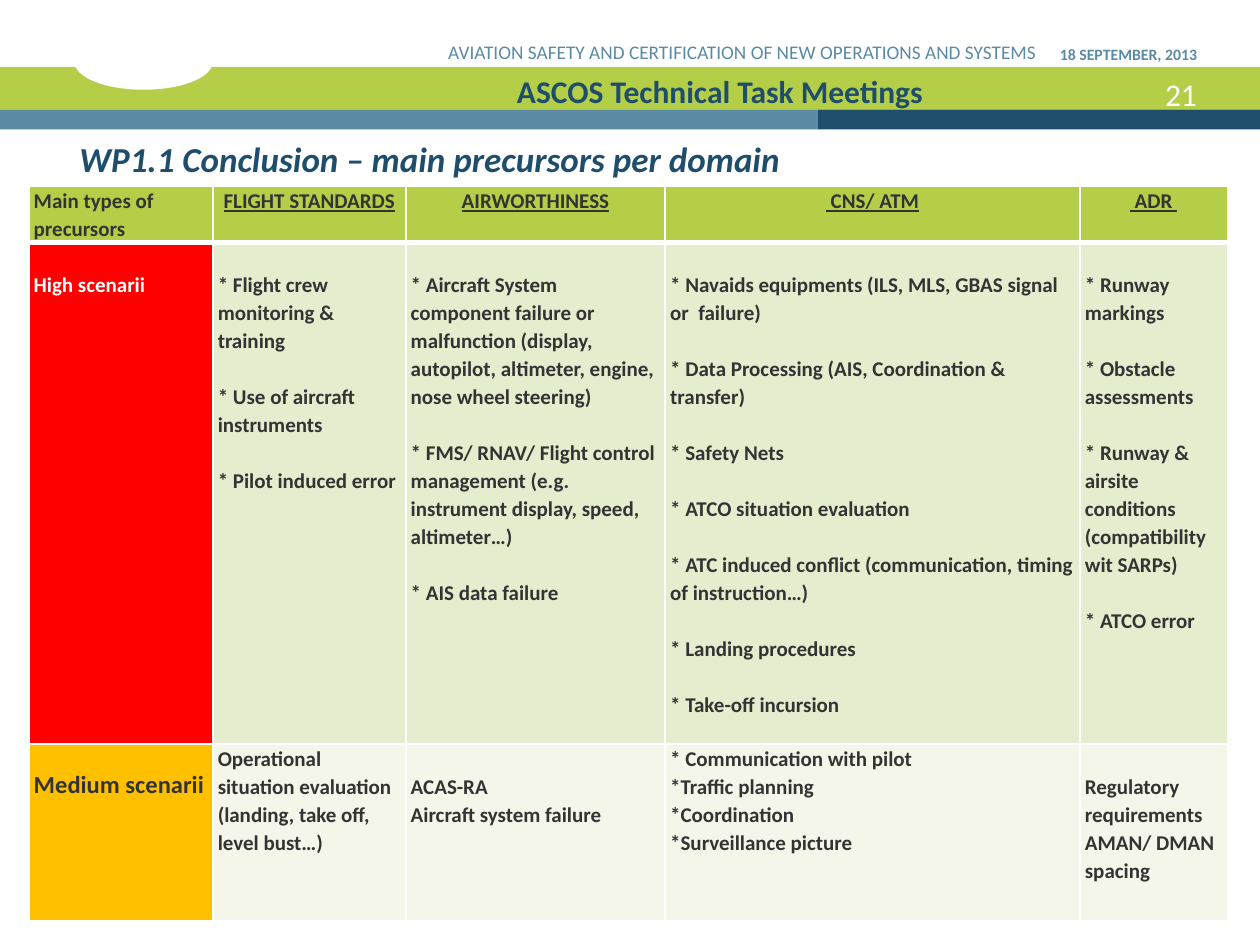
from dataclasses import dataclass

from lxml import etree
from pptx import Presentation
from pptx.dml.color import RGBColor
from pptx.enum.shapes import MSO_SHAPE
from pptx.enum.text import MSO_ANCHOR, MSO_AUTO_SIZE, PP_ALIGN
from pptx.oxml.ns import qn
from pptx.util import Cm, Pt

RECTANGLE, OVAL = MSO_SHAPE.RECTANGLE, MSO_SHAPE.OVAL
LEFT, CENTER, RIGHT = PP_ALIGN.LEFT, PP_ALIGN.CENTER, PP_ALIGN.RIGHT
TOP, BOTTOM = MSO_ANCHOR.TOP, MSO_ANCHOR.BOTTOM
GROW = MSO_AUTO_SIZE.SHAPE_TO_FIT_TEXT


@dataclass(frozen=True)
class Theme:
    font: str = "Calibri"
    white: str = "FFFFFF"
    green: str = "B5CE48"
    navy: str = "1E4E6B"
    steel: str = "5B8AA5"
    text: str = "333333"
    red: str = "FF0000"
    amber: str = "FFC000"
    band_dark: str = "E5EDCF"
    band_light: str = "F3F6E9"
    date_size: int = 9
    project_size: int = 11
    table_size: int = 12
    medium_size: int = 14
    meeting_size: int = 18
    title_size: int = 20
    line_pitch: int = 16


THEME = Theme()

COLUMN_WIDTHS = (3.71, 3.89, 5.23, 8.36, 2.97)
ROW_HEIGHTS = (1.12, 10.11, 3.56)

HEADER = ("Main types of precursors", "FLIGHT STANDARDS", "AIRWORTHINESS", " CNS/ ATM", " ADR ")
HIGH = (
    ("High scenarii",),
    ("* Flight crew monitoring & training",
     "* Use of aircraft  instruments",
     "* Pilot induced error"),
    ("* Aircraft System component failure or malfunction "
     "(display, autopilot, altimeter, engine, nose wheel steering)",
     "* FMS/ RNAV/ Flight control management (e.g. instrument display, speed, altimeter…)",
     "* AIS data failure"),
    ("* Navaids equipments (ILS, MLS, GBAS signal or  failure)",
     "* Data Processing (AIS, Coordination & transfer)",
     "* Safety Nets",
     "* ATCO situation evaluation",
     "* ATC induced conflict (communication, timing of instruction…)",
     "* Landing procedures",
     "* Take-off incursion"),
    ("* Runway markings",
     "* Obstacle assessments",
     "* Runway & airsite conditions (compatibility wit SARPs)",
     "* ATCO error"),
)
MEDIUM = (
    ("Medium scenarii",),
    ("Operational situation evaluation (landing, take off, level bust…)",),
    ("ACAS-RA", "Aircraft system failure"),
    ("* Communication with pilot", "*Traffic planning", "*Coordination", "*Surveillance picture"),
    ("Regulatory requirements", "AMAN/ DMAN spacing"),
)
MEDIUM_LOWERED = (True, False, True, False, True)


def style_font(font, size, color, bold=False, italic=False, underline=False):
    font.name = THEME.font
    font.size = Pt(size)
    font.color.rgb = RGBColor.from_string(color)
    font.bold, font.italic, font.underline = bold, italic, underline


def add_block(slide, kind, left, top, width, height, color):
    shape = slide.shapes.add_shape(kind, Cm(left), Cm(top), Cm(width), Cm(height))
    shape.shadow.inherit = False
    shape.fill.solid()
    shape.fill.fore_color.rgb = RGBColor.from_string(color)
    shape.line.fill.background()


def add_text(slide, text, left, top, width, height, align, size, color, **emphasis):
    """Add a text box; right-aligned text sits at the bottom, flush with the right edge."""
    frame = slide.shapes.add_textbox(Cm(left), Cm(top), Cm(width), Cm(height)).text_frame
    frame.word_wrap = True
    if align == RIGHT:
        frame.vertical_anchor = BOTTOM
        frame.margin_right = 0
    else:
        frame.auto_size = GROW
    frame.text = text
    paragraph = frame.paragraphs[0]
    paragraph.alignment = align
    style_font(paragraph.runs[0].font, size, color, **emphasis)


def set_borders(cell, top, bottom):
    """Draw white borders, 1 pt at the sides and the given points above and below."""
    properties = cell._tc.get_or_add_tcPr()
    for index, (tag, points) in enumerate((("lnL", 1), ("lnR", 1), ("lnT", top), ("lnB", bottom))):
        line = etree.Element(qn(f"a:{tag}"), w=str(Pt(points)))
        fill = etree.SubElement(line, qn("a:solidFill"))
        etree.SubElement(fill, qn("a:srgbClr"), val=THEME.white)
        properties.insert(index, line)


def fill_cell(cell, lines, fill, color=THEME.text, size=THEME.table_size,
              align=LEFT, underline=False, lowered=False, gap=0):
    """Write one paragraph per line; lowered starts the text one line down."""
    cell.fill.solid()
    cell.fill.fore_color.rgb = RGBColor.from_string(fill)
    cell.margin_left = cell.margin_right = Cm(0.1)
    cell.margin_top = Pt(THEME.line_pitch) if lowered else 0
    cell.margin_bottom = 0
    cell.vertical_anchor = TOP
    cell.text_frame.text = "\n".join(lines)
    for index, paragraph in enumerate(cell.text_frame.paragraphs):
        paragraph.alignment = align
        paragraph.line_spacing = Pt(THEME.line_pitch)
        paragraph.space_before = Pt(gap if index else 0)
        style_font(paragraph.runs[0].font, size, color, bold=True, underline=underline)


def add_precursor_table(slide):
    table = slide.shapes.add_table(
        len(ROW_HEIGHTS), len(COLUMN_WIDTHS), Cm(0.58), Cm(3.76),
        Cm(sum(COLUMN_WIDTHS)), Cm(sum(ROW_HEIGHTS))).table
    table.first_row = table.horz_banding = False
    for row, height in zip(table.rows, ROW_HEIGHTS):
        row.height = Cm(height)
    for index, width in enumerate(COLUMN_WIDTHS):
        table.columns[index].width = Cm(width)
        header, high, medium = (table.cell(row, index) for row in range(3))
        is_label = index == 0
        fill_cell(header, [HEADER[index]], THEME.green,
                  align=LEFT if is_label else CENTER, underline=not is_label)
        fill_cell(high, HIGH[index], THEME.red if is_label else THEME.band_dark,
                  color=THEME.white if is_label else THEME.text,
                  lowered=True, gap=THEME.line_pitch)
        fill_cell(medium, MEDIUM[index], THEME.amber if is_label else THEME.band_light,
                  size=THEME.medium_size if is_label else THEME.table_size,
                  lowered=MEDIUM_LOWERED[index])
        set_borders(header, 1, 3)
        set_borders(high, 3, 1)
        set_borders(medium, 1, 1)


def add_banner(slide):
    add_block(slide, RECTANGLE, 0, 1.35, 25.4, 0.86, THEME.green)
    add_block(slide, RECTANGLE, 16.48, 2.21, 8.92, 0.4, THEME.navy)
    add_block(slide, RECTANGLE, 0, 2.21, 16.48, 0.4, THEME.steel)
    add_block(slide, OVAL, 1.5, 0.69, 2.79, 1.12, THEME.white)
    add_text(slide, "21", 22.02, 1.37, 2.11, 1.02, RIGHT, THEME.meeting_size, THEME.white)
    add_text(slide, "18 SEPTEMBER, 2013", 21.11, 0.13, 3.02, 1.27, RIGHT,
             THEME.date_size, THEME.steel, bold=True)
    add_text(slide, "AVIATION SAFETY AND CERTIFICATION OF NEW OPERATIONS AND SYSTEMS",
             7.49, 0.13, 13.41, 1.27, RIGHT, THEME.project_size, THEME.steel)
    add_text(slide, "ASCOS Technical Task Meetings", 6.73, 1.32, 15.57, 1.02, CENTER,
             THEME.meeting_size, THEME.navy, bold=True)


def main():
    presentation = Presentation()
    presentation.slide_width, presentation.slide_height = Cm(25.4), Cm(19.05)
    slide = presentation.slides.add_slide(presentation.slide_layouts[6])
    add_banner(slide)
    add_text(slide, "WP1.1 Conclusion – main precursors per domain", 1.35, 2.64, 23.39, 1.12,
             LEFT, THEME.title_size, THEME.navy, bold=True, italic=True)
    add_precursor_table(slide)
    presentation.save("out.pptx")


if __name__ == "__main__":
    main()
